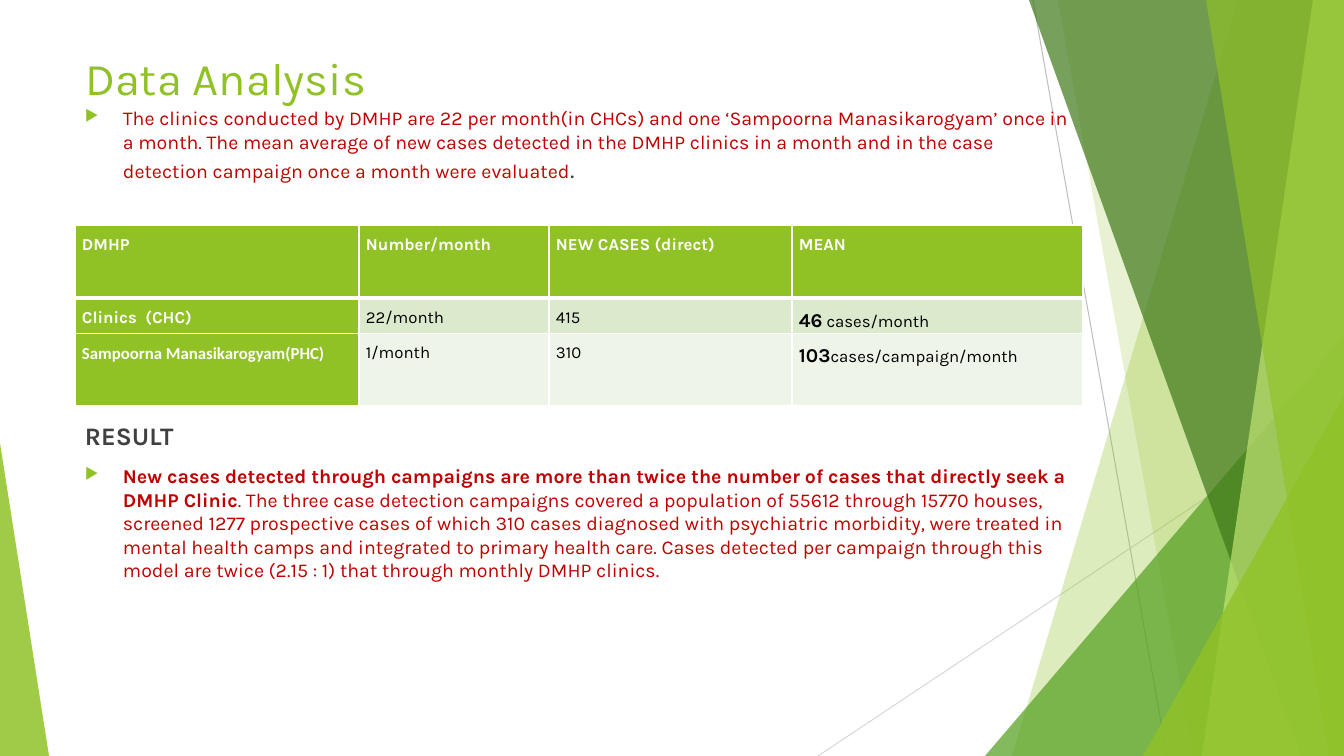
"""Build the Data Analysis slide with its clinic table and result text."""
from dataclasses import dataclass

from lxml import etree
from pptx import Presentation
from pptx import util as u
from pptx.dml.color import RGBColor
from pptx.enum import shapes, text
from pptx.oxml import ns

WIDE, HIGH = 1344, 756
PX = u.Inches(7.5) / HIGH
LEFT, SPAN = 75, 1008

LIME = RGBColor(0x90, 0xC2, 0x26)
GREEN = RGBColor(0x54, 0xA0, 0x21)
FOREST = RGBColor(0x3F, 0x78, 0x19)
PALE = RGBColor(0xC0, 0xE4, 0x74)
MINT = RGBColor(0xDB, 0xE9, 0xCD)
MIST = RGBColor(0xEE, 0xF4, 0xE8)
SILVER = RGBColor(0xBF, 0xBF, 0xBF)
CLOUD = RGBColor(0xD9, 0xD9, 0xD9)
RED = RGBColor(0xC0, 0x00, 0x00)
GREY = RGBColor(0x40, 0x40, 0x40)
BLACK = RGBColor(0, 0, 0)
WHITE = RGBColor(0xFF, 0xFF, 0xFF)


@dataclass
class Ray:
    start: tuple[int, int]
    end: tuple[int, int]
    color: RGBColor


@dataclass
class Band:
    """A strip that runs from the top edge to the bottom right corner."""
    top: int
    low: int
    color: RGBColor
    alpha: int


@dataclass
class Wedge:
    box: tuple[int, int, int, int]
    apex: int
    color: RGBColor
    alpha: int


@dataclass
class Piece:
    words: str
    size: float
    color: RGBColor
    bold: bool = False
    font: str = "Karla"


@dataclass
class Para:
    pieces: list[Piece]
    bullet: bool = False


RAYS = [Ray((1033, 0), (1167, HIGH), SILVER), Ray((WIDE, 406), (818, HIGH), CLOUD)]

DECOR = [
    Band(1238, 1012, LIME, 30),
    Band(1058, 1193, LIME, 20),
    Wedge((985, 336, 359, 420), 1, GREEN, 72),
    Band(1029, 1301, FOREST, 70),
    Band(1313, 1202, PALE, 70),
    Band(1206, 1329, LIME, 65),
    Wedge((1143, 396, 201, 360), 1, LIME, 80),
    Wedge((0, 443, 49, 313), 0, LIME, 85),
]

INTRO = [Para([
    Piece("The clinics conducted by DMHP are 22 per month(in CHCs) and one "
          "‘Sampoorna Manasikarogyam’ once in a month. The mean average of new cases "
          "detected in the DMHP clinics in a month and in the case detection campaign "
          "once a month were evaluated", 14, RED),
    Piece(".", 18, GREY)], True)]

RESULT = [
    Para([Piece("RESULT", 18, GREY, True)]),
    Para([
        Piece("New cases detected through campaigns are more than twice the number of "
              "cases that directly seek a DMHP Clinic", 14, RED, True),
        Piece(". The three case detection campaigns covered a population of 55612 through "
              "15770 houses, screened 1277 prospective cases of which 310 cases diagnosed "
              "with psychiatric morbidity, were treated in mental health camps and "
              "integrated to primary health care. Cases detected per campaign through this "
              "model are twice (2.15 : 1) that through monthly DMHP clinics.", 14, RED)], True)]


def head(words: str, font: str = "Karla") -> list[Piece]:
    return [Piece(words, 12, WHITE, True, font)]


def plain(words: str) -> list[Piece]:
    return [Piece(words, 12, BLACK)]


def mean(count: str, unit: str) -> list[Piece]:
    return [Piece(count, 14, BLACK, True), *plain(unit)]


COLS = [284, 190, 243, 291]
ROWS = [73, 34, 72]
FILLS = [LIME, MINT, MIST]
CELLS = [
    [head(label) for label in ("DMHP", "Number/month", "NEW CASES (direct)", "MEAN")],
    [head("Clinics  (CHC)"), plain("22/month"), plain("415"), mean("46", " cases/month")],
    [head("Sampoorna Manasikarogyam(PHC)", "Calibri"), plain("1/month"), plain("310"),
     mean("103", "cases/campaign/month")],
]


def px(*sizes: int) -> list[u.Emu]:
    return [u.Emu(round(size * PX)) for size in sizes]


def node(owner, tag: str, **attrs: str):
    return etree.SubElement(owner, ns.qn(tag), attrs)


def style(run, piece: Piece) -> None:
    run.font.size = u.Pt(piece.size)
    run.font.name = piece.font
    run.font.bold = piece.bold
    run.font.color.rgb = piece.color


def write(para, pieces: list[Piece]) -> None:
    for piece in pieces:
        run = para.add_run()
        run.text = piece.words
        style(run, piece)


def draw_ray(slide, ray: Ray) -> None:
    line = slide.shapes.add_connector(
        shapes.MSO_CONNECTOR.STRAIGHT, *px(*ray.start, *ray.end))
    line.line.color.rgb = ray.color
    line.line.width = u.Pt(0.75)
    node(line._element.spPr, "a:effectLst")


def draw_decor(slide, item: Band | Wedge) -> None:
    if isinstance(item, Band):
        pen = slide.shapes.build_freeform(item.top, 0, scale=PX)
        pen.add_line_segments([(WIDE, 0), (WIDE, HIGH), (item.low, HIGH)], close=True)
        shape = pen.convert_to_shape()
    else:
        shape = slide.shapes.add_shape(
            shapes.MSO_SHAPE.ISOSCELES_TRIANGLE, *px(*item.box))
        shape.adjustments[0] = item.apex
    shape.shadow.inherit = False
    shape.line.fill.background()
    shape.fill.solid()
    shape.fill.fore_color.rgb = item.color
    tint = shape._element.spPr.find(".//" + ns.qn("a:srgbClr"))
    node(tint, "a:alpha", val=str(item.alpha * 1000))


def draw_title(slide) -> None:
    title = slide.shapes.title
    title.left, title.top, title.width, title.height = px(LEFT, 42, 948, 58)
    frame = title.text_frame
    frame.text = "Data Analysis"
    frame.auto_size = text.MSO_AUTO_SIZE.NONE
    frame.vertical_anchor = text.MSO_ANCHOR.TOP
    frame.margin_top, = px(8)
    para = frame.paragraphs[0]
    para.alignment = text.PP_ALIGN.LEFT
    style(para.runs[0], Piece("", 32.4, LIME))


def draw_text(slide, top: int, high: int, paras: list[Para]) -> None:
    frame = slide.shapes.add_textbox(*px(LEFT, top, SPAN, high)).text_frame
    frame.word_wrap = True
    for spot, item in enumerate(paras):
        para = frame.add_paragraph() if spot else frame.paragraphs[0]
        para.space_before = u.Pt(10 if spot else 0)
        write(para, item.pieces)
        if item.bullet:
            props = para._p.get_or_add_pPr()
            indent, = px(38)
            props.set("marL", str(indent))
            props.set("indent", str(-indent))
            node(node(props, "a:buClr"), "a:srgbClr", val=str(LIME))
            node(props, "a:buSzPct", val="80000")
            node(props, "a:buChar", char="▶")


def edge(cell, first: bool) -> None:
    props = cell._tc.get_or_add_tcPr()
    for spot, side in enumerate("LRTB"):
        width = u.Pt(3 if first and side == "B" else 1)
        line = etree.Element(ns.qn("a:ln" + side), w=str(width))
        node(node(line, "a:solidFill"), "a:srgbClr", val=str(WHITE))
        props.insert(spot, line)


def draw_table(slide) -> None:
    table = slide.shapes.add_table(
        len(ROWS), len(COLS), *px(LEFT, 225, sum(COLS), sum(ROWS))).table
    table.first_col = True
    for col, width in zip(table.columns, px(*COLS)):
        col.width = width
    for index, (row, high) in enumerate(zip(table.rows, px(*ROWS))):
        row.height = high
        for spot, cell in enumerate(row.cells):
            cell.margin_left, cell.margin_top, cell.margin_right, cell.margin_bottom = px(7, 0, 7, 0)
            cell.fill.solid()
            cell.fill.fore_color.rgb = FILLS[index] if spot else LIME
            edge(cell, index == 0)
            para = cell.text_frame.paragraphs[0]
            para.alignment = text.PP_ALIGN.JUSTIFY
            para.line_spacing = 1.5
            write(para, CELLS[index][spot])


def main() -> None:
    deck = Presentation()
    deck.slide_width, deck.slide_height = px(WIDE, HIGH)
    slide = deck.slides.add_slide(deck.slide_layouts[5])
    for ray in RAYS:
        draw_ray(slide, ray)
    for item in DECOR:
        draw_decor(slide, item)
    draw_title(slide)
    draw_text(slide, 101, 100, INTRO)
    draw_text(slide, 415, 180, RESULT)
    draw_table(slide)
    deck.save("out.pptx")


if __name__ == "__main__":
    main()
